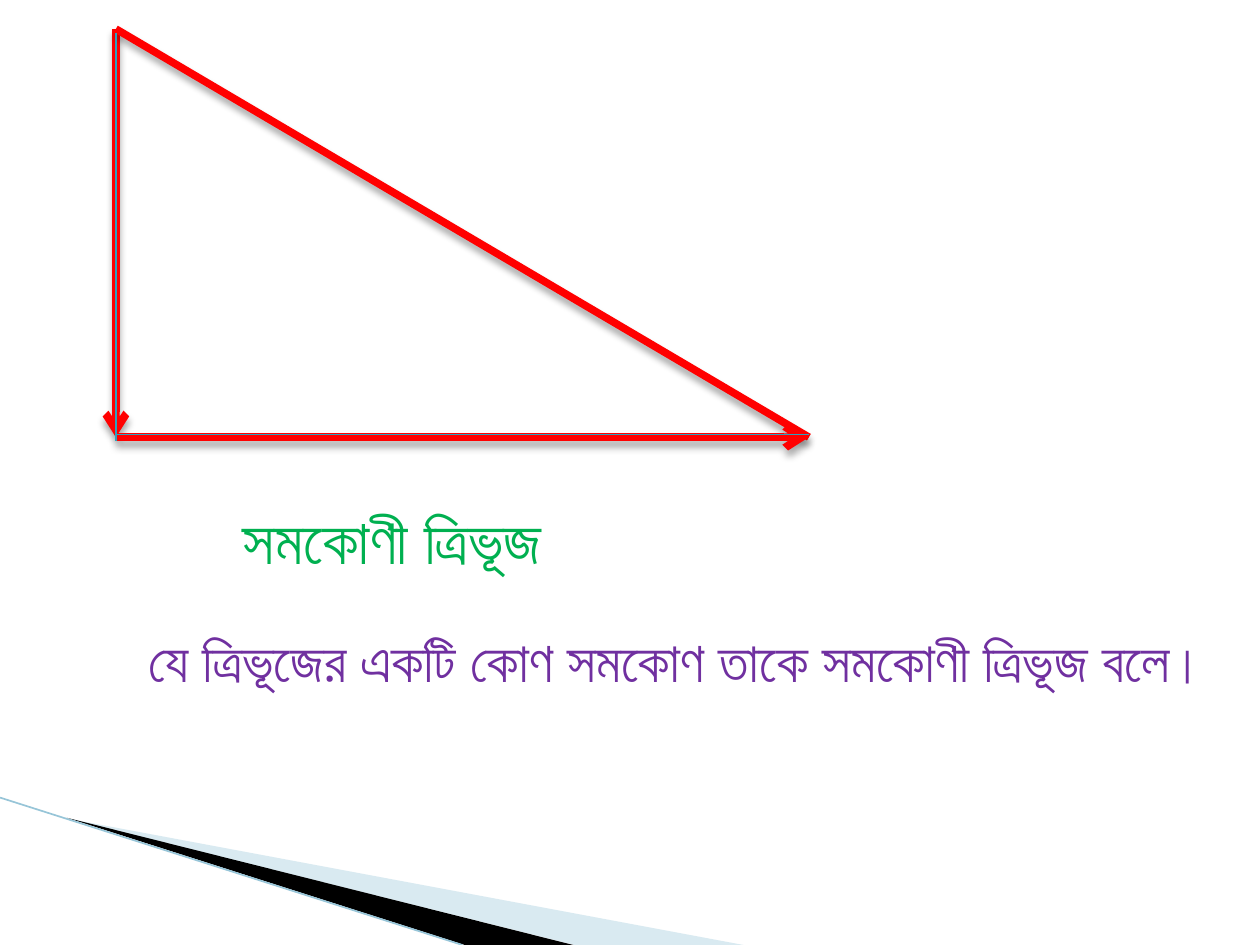
import pptx
import pptx.dml.color
import pptx.enum.shapes
import pptx.enum.text
import pptx.oxml
import pptx.oxml.ns
import pptx.util
from pptx.util import Inches

COLORS = {
    "side": "FF0000", "guide": "2DA2BF", "edge": "97C5D8",
    "pale": "A0CBDC", "black": "000000",
    "title": "00B050", "definition": "7030A0",
}
FONT = "Lato"
TOP, CORNER, RIGHT = (0.92, 0.23), (0.92, 3.47), (6.42, 3.47)

WEDGES = [
    ([(0.55, 6.5), (5.9, 7.5), (4.56, 7.5)], "pale", 40),
    ([(0.53, 6.49), (4.55, 7.5), (3.69, 7.5)], "black", 100),
]
SIDES = [(TOP, CORNER, True), (TOP, RIGHT, False), (CORNER, RIGHT, True)]
GUIDES = [((0.92, 0.26), (0.92, 3.5)), ((0.92, 3.45), (6.42, 3.45))]
TEXTS = [
    ("সমকোণী ত্রিভূজ", dict(box=(1.83, 3.93, 3, 0.71), size=36, color="title")),
    ("যে ত্রিভূজের একটি কোণ সমকোণ তাকে সমকোণী ত্রিভূজ বলে।",
     dict(box=(0.42, 4.92, 9.58, 0.94), size=32, color="definition", indent=0.66)),
]


def rgb(name):
    return pptx.dml.color.RGBColor.from_string(COLORS[name])


def add_xml(parent, tag, **attrs):
    el = pptx.oxml.parse_xml(f"<a:{tag} {pptx.oxml.ns.nsdecls('a')}/>")
    for key, value in attrs.items():
        el.set(key, str(value))
    parent.append(el)
    return el


def add_wedge(shapes, points, color, opacity):
    fb = shapes.build_freeform(Inches(points[0][0]), Inches(points[0][1]))
    fb.add_line_segments([(Inches(x), Inches(y)) for x, y in points[1:]])
    sp = fb.convert_to_shape()
    sp.shadow.inherit = False
    sp.fill.solid()
    sp.fill.fore_color.rgb = rgb(color)
    sp.line.fill.background()
    if opacity < 100:
        clr = sp._element.spPr.find(".//" + pptx.oxml.ns.qn("a:srgbClr"))
        add_xml(clr, "alpha", val=opacity * 1000)


def add_line(shapes, start, end, color, width, arrow=False, shadow=False):
    ends = [Inches(v) for v in (*start, *end)]
    line = shapes.add_connector(pptx.enum.shapes.MSO_CONNECTOR.STRAIGHT, *ends)
    line.line.color.rgb = rgb(color)
    line.line.width = pptx.util.Pt(width)
    if arrow:
        add_xml(line.line._get_or_add_ln(), "tailEnd", type="arrow")
    effects = add_xml(line._element.spPr, "effectLst")
    if shadow:
        outer = add_xml(effects, "outerShdw", blurRad=pptx.util.Pt(4),
                        dist=pptx.util.Pt(3), dir=90 * 60000, rotWithShape=0)
        clr = add_xml(outer, "srgbClr", val=COLORS["black"])
        add_xml(clr, "alpha", val=35000)


def add_text(shapes, text, box, size, color, indent=0):
    tf = shapes.add_textbox(*[Inches(v) for v in box]).text_frame
    tf.word_wrap = True
    tf.auto_size = pptx.enum.text.MSO_AUTO_SIZE.SHAPE_TO_FIT_TEXT
    p = tf.paragraphs[0]
    if indent:
        p._p.get_or_add_pPr().set("indent", str(Inches(indent)))
    r = p.add_run()
    r.text = text
    r.font.name = FONT
    r.font.size = pptx.util.Pt(size)
    r.font.color.rgb = rgb(color)


def main():
    prs = pptx.Presentation()
    prs.slide_width, prs.slide_height = Inches(10), Inches(7.5)
    s = prs.slides.add_slide(prs.slide_layouts[6])
    for points, color, opacity in WEDGES:
        add_wedge(s.shapes, points, color, opacity)
    add_line(s.shapes, (0, 6.33), (3.67, 7.5), "edge", 0.95)
    triangle = s.shapes.add_group_shape().shapes
    for start, end, arrow in SIDES:
        add_line(triangle, start, end, "side", 4.33, arrow=arrow, shadow=True)
    for start, end in GUIDES:
        add_line(triangle, start, end, "guide", 0.75)
    for text, style in TEXTS:
        add_text(s.shapes, text, **style)
    prs.save("out.pptx")


if __name__ == "__main__":
    main()
